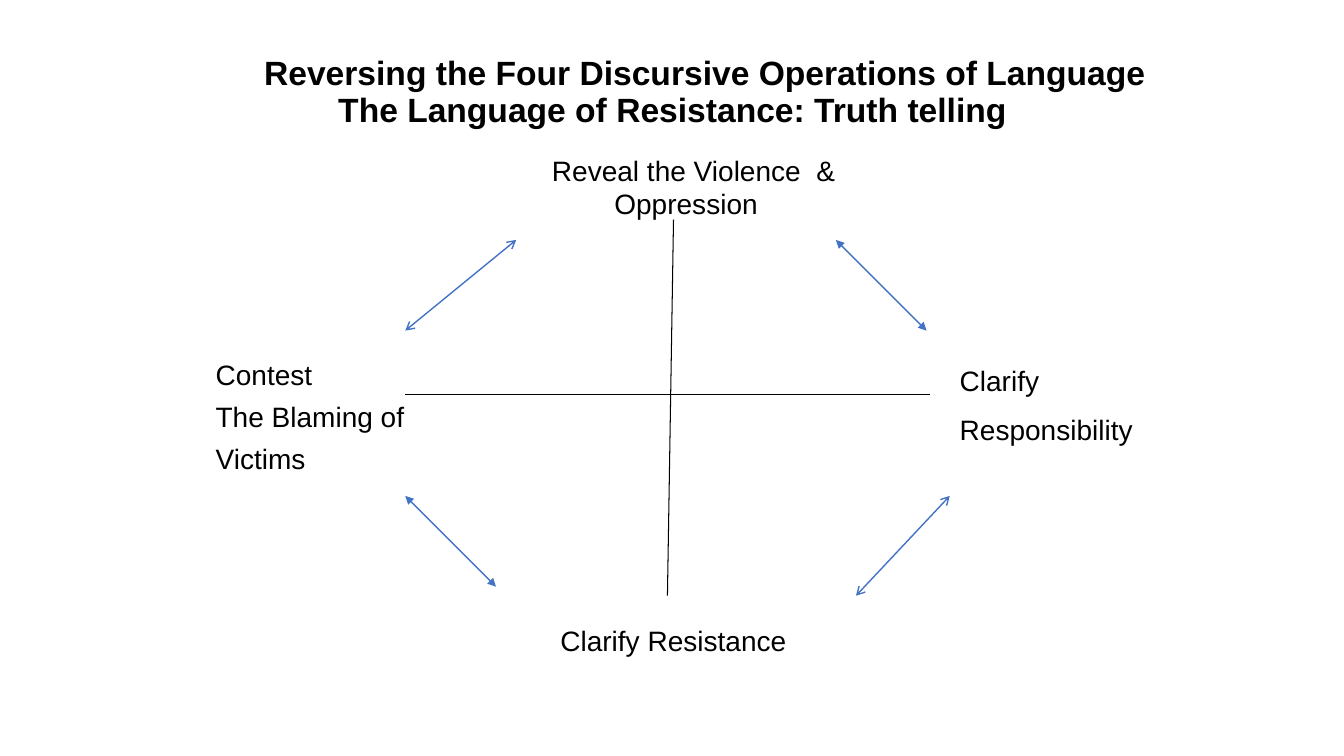
from lxml import etree
from pptx import Presentation
from pptx.dml.color import RGBColor
from pptx.enum.shapes import MSO_CONNECTOR
from pptx.enum.text import MSO_ANCHOR, MSO_AUTO_SIZE, PP_ALIGN
from pptx.oxml.ns import qn
from pptx.util import Pt

LEFT, MID = PP_ALIGN.LEFT, PP_ALIGN.CENTER
PX = 9144  # 100 px to the inch
HEX = {"ink": "000000", "blue": "4472C4"}


def write(frame, lines, size=20, bold=False, align=LEFT, gap=0, pitch=1.0,
          margins=(), indent=0):
    """Fill a frame with one paragraph per line."""
    frame.word_wrap = True
    for i, line in enumerate(lines):
        para = frame.paragraphs[0] if i == 0 else frame.add_paragraph()
        para.alignment = align
        para.line_spacing = pitch
        para.space_before = Pt(gap)
        props = para._p.get_or_add_pPr()
        props.set("marL", str(margins[i] * PX if margins else 0))
        props.set("indent", str(indent * PX))
        run = para.add_run()
        run.text = line
        run.font.name = "Arial"
        run.font.size = Pt(size)
        run.font.bold = bold
        run.font.color.rgb = RGBColor.from_string(HEX["ink"])


def draw(ends, color, width, tip=None):
    """Draw a line, with the same tip on both ends if one is given."""
    con = slide.shapes.add_connector(
        MSO_CONNECTOR.STRAIGHT, *(v * PX for v in ends))
    con.line.color.rgb = RGBColor.from_string(HEX[color])
    con.line.width = Pt(width)
    if tip:
        for end in ("a:headEnd", "a:tailEnd"):
            etree.SubElement(con.get_or_add_ln(), qn(end), type=tip)
    etree.SubElement(con._element.spPr, qn("a:effectLst"))


deck = Presentation()
deck.slide_width, deck.slide_height = 1333 * PX, 750 * PX
slide = deck.slides.add_slide(deck.slide_layouts[5])

# Title, first line set off to the right
title = slide.shapes.title
title.left, title.top, title.width, title.height = (
    v * PX for v in (67, 30, 1200, 125))
title.text_frame.vertical_anchor = MSO_ANCHOR.MIDDLE
title.text_frame.auto_size = MSO_AUTO_SIZE.NONE
write(title.text_frame,
      ["Reversing the Four Discursive Operations of Language",
       "The Language of Resistance: Truth telling"],
      size=24, bold=True, align=MID, pitch=0.9, margins=(64, 0))

# Cross
for ends in ((668, 218, 662, 591), (922, 391, 402, 391)):
    draw(ends, "ink", 0.75)

# Labels at the four ends of the cross
labels = [
    ((533, 614, 317, 44), ["Clarify Resistance"], {"indent": 13}),
    ((204, 356, 235, 126), ["Contest", "The Blaming of", "Victims"],
     {"gap": 11, "pitch": 0.8}),
    ((512, 147, 337, 77), ["Reveal the Violence  & Oppression"],
     {"align": MID, "indent": 15}),
    ((942, 356, 225, 94), ["Clarify", "Responsibility"], {"gap": 11}),
]
for box, lines, form in labels:
    label = slide.shapes.add_textbox(*(v * PX for v in box))
    write(label.text_frame, lines, **form)

# Double arrows between the labels
arrows = [
    ((402, 328, 512, 238), "arrow"),
    ((829, 238, 919, 328), "triangle"),
    ((402, 492, 492, 582), "triangle"),
    ((942, 492, 849, 591), "arrow"),
]
for ends, tip in arrows:
    draw(ends, "blue", 1, tip)

deck.save("out.pptx")
